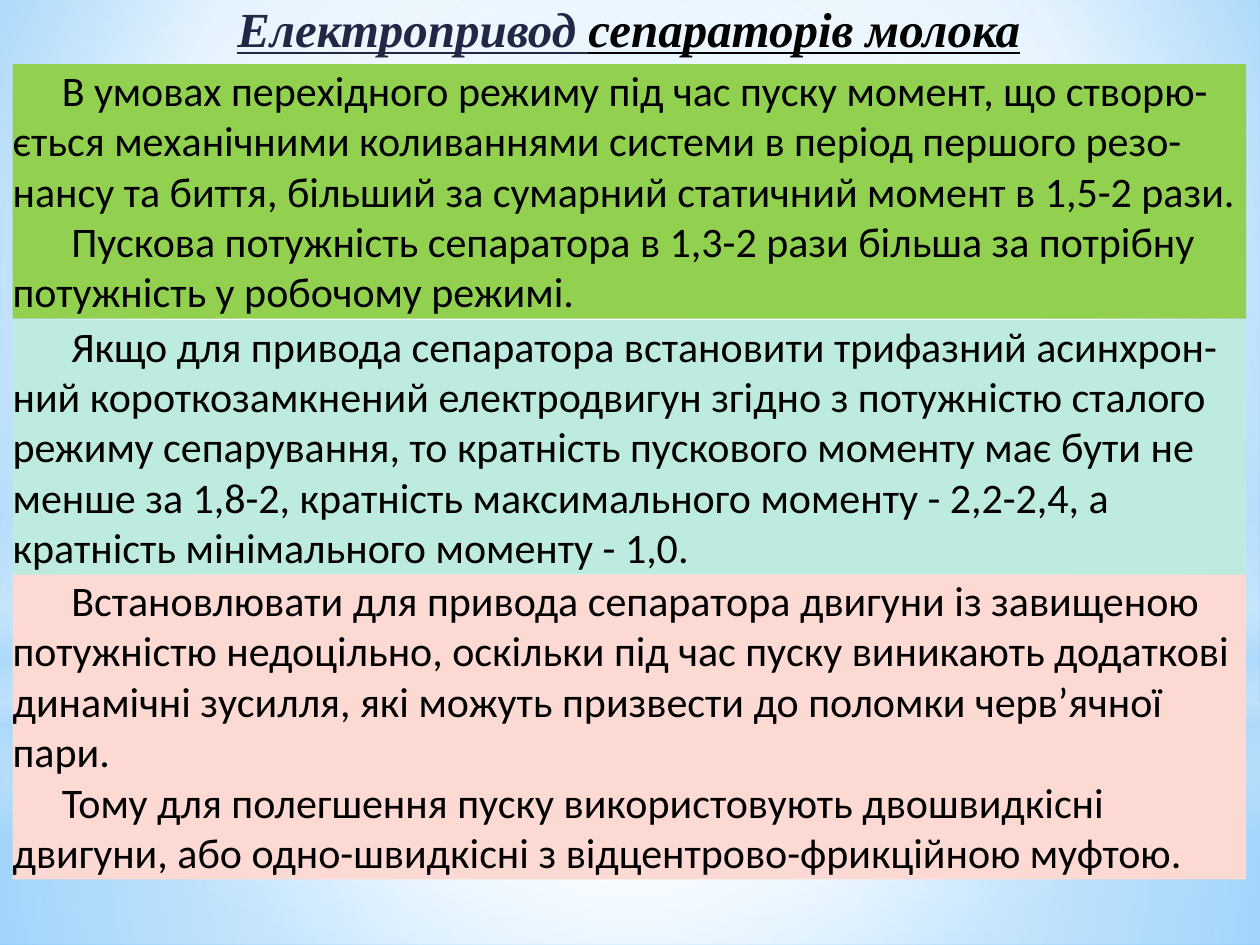
from lxml import etree
from pptx import Presentation
from pptx.dml.color import RGBColor
from pptx.enum.shapes import MSO_SHAPE
from pptx.enum.text import MSO_ANCHOR, MSO_AUTO_SIZE, PP_ALIGN
from pptx.oxml.ns import qn
from pptx.util import Inches, Pt

RECTANGLE, OVAL = MSO_SHAPE.RECTANGLE, MSO_SHAPE.OVAL
TOP, FIT = MSO_ANCHOR.TOP, MSO_AUTO_SIZE.SHAPE_TO_FIT_TEXT
LEFT, CENTER = PP_ALIGN.LEFT, PP_ALIGN.CENTER

BLACK = RGBColor(0x00, 0x00, 0x00)
NAVY = RGBColor(0x21, 0x27, 0x45)
GREEN = RGBColor(0x92, 0xD0, 0x50)
MINT = RGBColor(0xBE, 0xEB, 0xDF)
PINK = RGBColor(0xFC, 0xD9, 0xD3)
WHITE = RGBColor(0xFF, 0xFF, 0xFF)
PALE_BLUE = RGBColor(0xB4, 0xDC, 0xFA)
SKY = RGBColor(0x9E, 0xD5, 0xFF)
BLUE = RGBColor(0x5B, 0xB9, 0xFF)

CENTRE = (50, 50, 50, 50)

GLOWS = [
    (RECTANGLE, (0, 5.58, 10, 1.92), [(0, WHITE, 91), (37, WHITE, 76), (100, PALE_BLUE, 79)], CENTRE),
    (RECTANGLE, (0, 0, 10, 5.58), [(0, WHITE, 89), (48, WHITE, 62), (100, PALE_BLUE, 79)], CENTRE),
    (RECTANGLE, (0, 4.12, 10, 2.5),
     [(0, WHITE, 0), (29, WHITE, 30), (45, PALE_BLUE, 40), (55, WHITE, 26), (65, PALE_BLUE, 60), (100, WHITE, 0)],
     None),
    (OVAL, (0, 1.75, 10, 5.58), [(0, WHITE, 100), (56, WHITE, 0)], CENTRE),
]

PANELS = [
    (0.51, 2.02, GREEN, [
        "В умовах перехідного режиму під час пуску момент, що створю-ється механічними коливаннями "
        "системи в період першого резо-нансу та биття, більший за сумарний статичний момент в 1,5-2 рази.",
        " Пускова потужність сепаратора в 1,3-2 рази більша за потрібну потужність у робочому режимі.",
    ]),
    (2.54, 2.02, MINT, [
        " Якщо для привода сепаратора встановити трифазний асинхрон-ний короткозамкнений електродвигун "
        "згідно з потужністю сталого режиму сепарування, то кратність пускового моменту має бути не менше "
        "за 1,8-2, кратність максимального моменту - 2,2-2,4, а кратність мінімального моменту - 1,0.",
    ]),
    (4.56, 2.42, PINK, [
        " Встановлювати для привода сепаратора двигуни із завищеною потужністю недоцільно, оскільки під "
        "час пуску виникають додаткові динамічні зусилля, які можуть призвести до поломки черв’ячної пари.",
        "Тому для полегшення пуску використовують двошвидкісні двигуни, або одно-швидкісні з "
        "відцентрово-фрикційною муфтою.",
    ]),
]


class SlideBuilder:
    """Holds the style and the current slide and adds each kind of element."""

    title_font, body_font = "Times New Roman", "Calibri"
    title_size, body_size = Pt(28), Pt(24)
    first_line = Inches(0.39)

    def __init__(self, slide):
        self.slide = slide

    def gradient(self, fill, owner, stops, focus):
        fill.gradient()
        gradient = owner.find(".//" + qn("a:gradFill"))
        for child in list(gradient):
            gradient.remove(child)
        stop_list = etree.SubElement(gradient, qn("a:gsLst"))
        for position, color, opacity in stops:
            stop = etree.SubElement(stop_list, qn("a:gs"), pos=str(position * 1000))
            tint = etree.SubElement(stop, qn("a:srgbClr"), val=str(color))
            if opacity < 100:
                etree.SubElement(tint, qn("a:alpha"), val=str(opacity * 1000))
        if focus:
            circle = etree.SubElement(gradient, qn("a:path"), path="circle")
            sides = {side: str(share * 1000) for side, share in zip("ltrb", focus)}
            etree.SubElement(circle, qn("a:fillToRect"), **sides)
        else:
            etree.SubElement(gradient, qn("a:lin"), ang=str(90 * 60000), scaled="0")

    def background(self, stops, focus):
        self.gradient(self.slide.background.fill, self.slide.element, stops, focus)

    def shape(self, kind, box):
        shape = self.slide.shapes.add_shape(kind, *map(Inches, box))
        shape.shadow.inherit = False
        shape.line.fill.background()
        return shape

    def glow(self, kind, box, stops, focus):
        glow = self.shape(kind, box)
        self.gradient(glow.fill, glow.element, stops, focus)
        self.slide.shapes.title.element.addprevious(glow.element)

    def frame(self, shape):
        frame = shape.text_frame
        frame.margin_left = frame.margin_top = frame.margin_right = frame.margin_bottom = 0
        frame.word_wrap = True
        frame.auto_size = FIT
        frame.vertical_anchor = TOP
        return frame

    def title(self, box, parts):
        title = self.slide.shapes.title
        title.left, title.top, title.width, title.height = map(Inches, box)
        heading = self.frame(title).paragraphs[0]
        heading.alignment = CENTER
        heading.line_spacing = 0.85
        font = heading.font
        font.name, font.size = self.title_font, self.title_size
        font.bold = font.italic = font.underline = True
        for text, color in parts:
            part = heading.add_run()
            part.text = text
            part.font.color.rgb = color

    def panel(self, top, height, color, texts):
        panel = self.shape(RECTANGLE, (0.1, top, 9.79, height))
        panel.fill.solid()
        panel.fill.fore_color.rgb = color
        frame = self.frame(panel)
        frame.text = "\n".join(texts)
        for paragraph in frame.paragraphs:
            paragraph.alignment = LEFT
            paragraph.font.name, paragraph.font.size = self.body_font, self.body_size
            paragraph.font.color.rgb = BLACK
            properties = paragraph._p.get_or_add_pPr()
            properties.set("marL", "0")
            properties.set("indent", str(self.first_line))


def main():
    presentation = Presentation()
    presentation.slide_width, presentation.slide_height = Inches(10), Inches(7.5)
    builder = SlideBuilder(presentation.slides.add_slide(presentation.slide_layouts[5]))
    builder.background([(0, SKY, 100), (60, WHITE, 100), (100, BLUE, 100)], (20, 10, 20, 60))
    for glow in GLOWS:
        builder.glow(*glow)
    builder.title((0.12, 0.06, 9.74, 0.4), [("Електропривод ", NAVY), ("сепараторів молока", BLACK)])
    for panel in PANELS:
        builder.panel(*panel)
    presentation.save("out.pptx")


if __name__ == "__main__":
    main()
